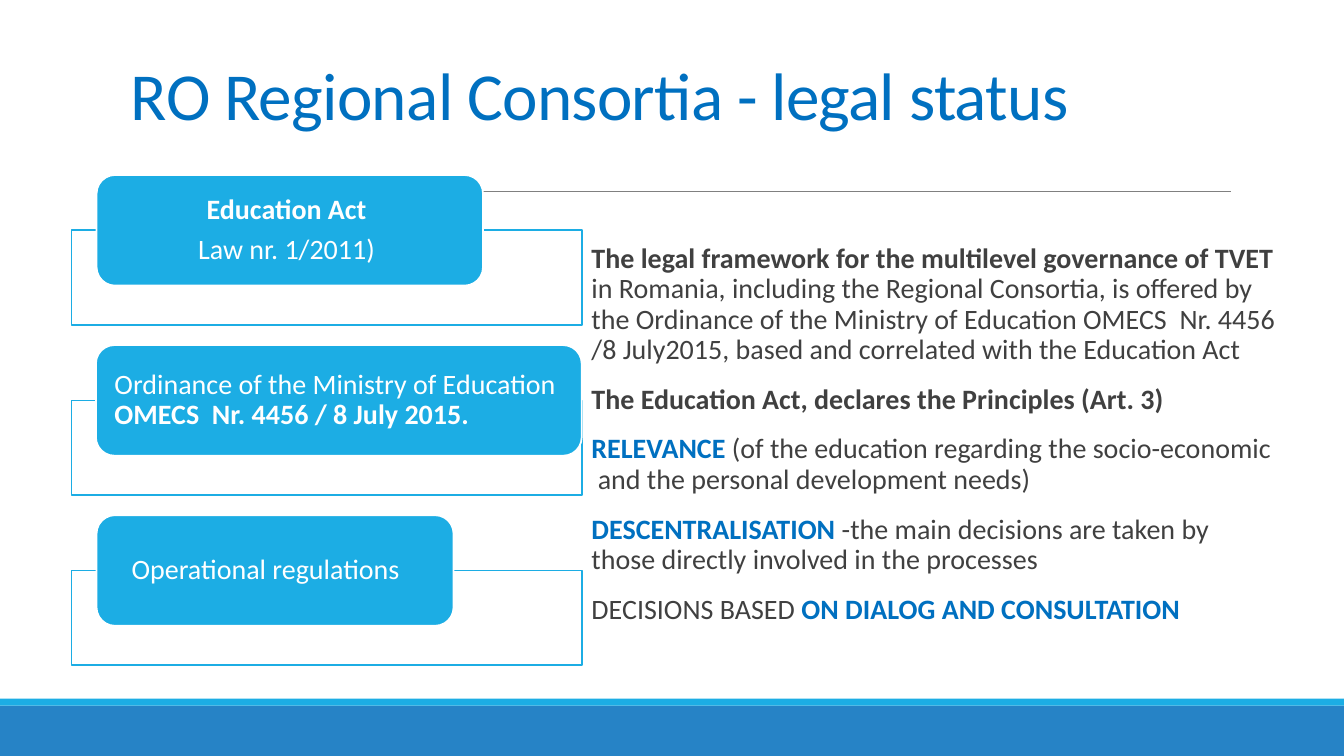
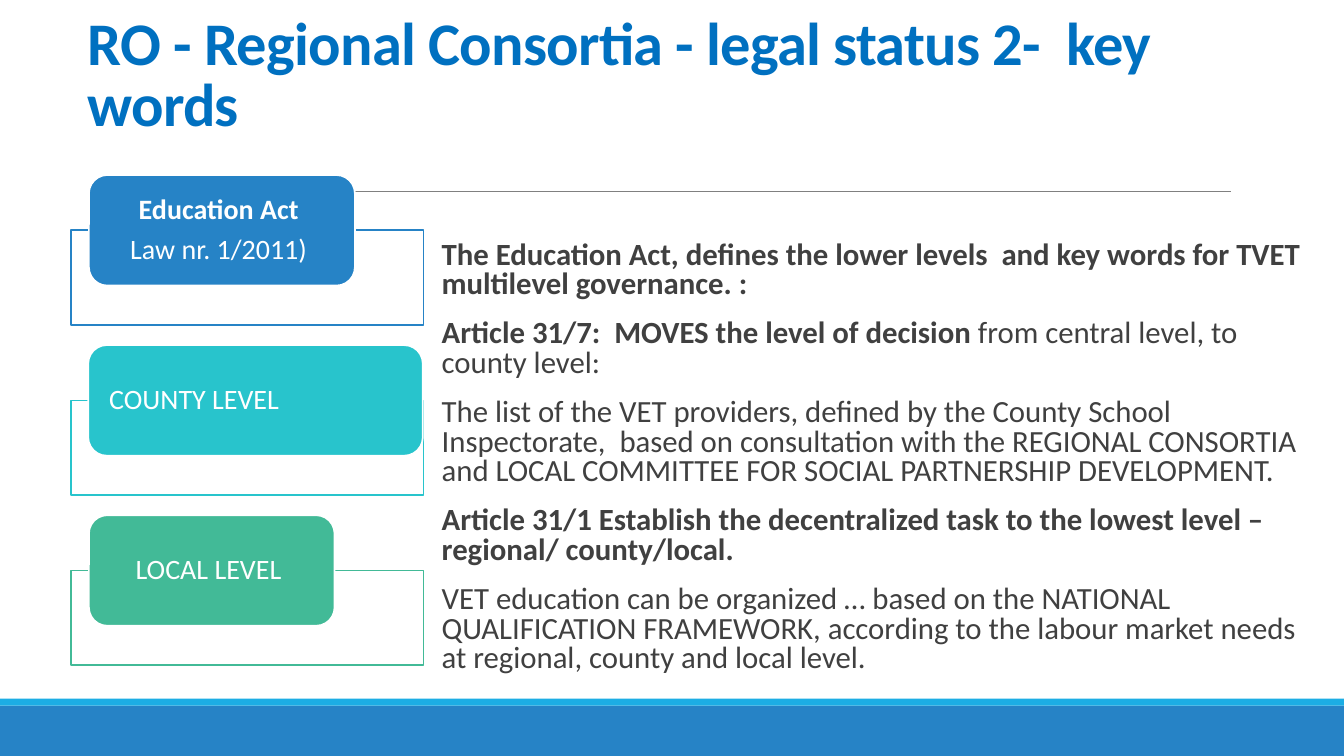
from pptx import Presentation
from pptx import util as u
from pptx.dml.color import RGBColor
from pptx.enum import shapes, text
from lxml import etree

BLUE, SKY, TEAL, GREEN = "2683C6", "1CADE4", "28C4CC", "42BA97"
ACCENT, INK, WHITE, RULE = "0070C0", "404040", "FFFFFF", "808080"
FONT = "Calibri"
LEFT, CENTER = text.PP_ALIGN.LEFT, text.PP_ALIGN.CENTER
TOP, MIDDLE, BOTTOM = text.MSO_ANCHOR.TOP, text.MSO_ANCHOR.MIDDLE, text.MSO_ANCHOR.BOTTOM
RECT, ROUNDED = shapes.MSO_SHAPE.RECTANGLE, shapes.MSO_SHAPE.ROUNDED_RECTANGLE
DRAWING = "{http://schemas.openxmlformats.org/drawingml/2006/main}"
WIDTH, HEIGHT = 960, 540
CARD_TOP, CARD_STEP, CARD_HEIGHT = 125, 121.5, 79
FRAME_LEFT, FRAME_DROP, FRAME_HEIGHT = 51, 39.5, 67.5


def rgb(value):
    return RGBColor.from_string(value)


class Deck:
    """Holds the shared style and the slide being built."""

    def __init__(self):
        self.prs = Presentation()
        self.prs.slide_width, self.prs.slide_height = u.Pt(WIDTH), u.Pt(HEIGHT)
        self.slide = None

    def new_slide(self):
        self.slide = self.prs.slides.add_slide(self.prs.slide_layouts[6])
        self.block(RECT, (0, 504, WIDTH, 36), BLUE)
        self.block(RECT, (0, 499, WIDTH, 5), SKY)
        self.rule(94.5, 879, 137)

    def block(self, kind, box, fill, outline=None):
        block = self.slide.shapes.add_shape(kind, *map(u.Pt, box))
        block.shadow.inherit = False
        block.fill.solid()
        block.fill.fore_color.rgb = rgb(fill)
        if outline:
            block.line.color.rgb = rgb(outline)
            block.line.width = u.Pt(1.25)
        else:
            block.line.fill.background()
        return block

    def rule(self, start, end, y):
        rule = self.slide.shapes.add_connector(
            shapes.MSO_CONNECTOR.STRAIGHT, u.Pt(start), u.Pt(y), u.Pt(end), u.Pt(y))
        rule.line.color.rgb = rgb(RULE)
        rule.line.width = u.Pt(0.5)
        etree.SubElement(rule._element.spPr, DRAWING + "effectLst")

    def set_text(self, holder, paragraphs, size, color, spacing, gap=0,
                 align=LEFT, anchor=TOP, insets=(0, 3.6, 0, 3.6), tracking=None):
        frame = holder.text_frame
        frame.word_wrap = True
        frame.vertical_anchor = anchor
        (frame.margin_left, frame.margin_top,
         frame.margin_right, frame.margin_bottom) = map(u.Pt, insets)
        for index, runs in enumerate(paragraphs):
            para = frame.add_paragraph() if index else frame.paragraphs[0]
            para.alignment = align
            para.line_spacing = spacing
            para.space_before = u.Pt(gap if index else 0)
            for words, bold, *tint in runs:
                if words == "\n":
                    para.add_line_break()
                    continue
                run = para.add_run()
                run.text = words
                run.font.name, run.font.size, run.font.bold = FONT, u.Pt(size), bold
                run.font.color.rgb = rgb(tint[0] if tint else color)
                if tracking:
                    run.font._element.set("spc", str(tracking))

    def text_box(self, box):
        return self.slide.shapes.add_textbox(*map(u.Pt, box))

    def title(self, words, box, size, bold):
        self.set_text(self.text_box(box), [[(words, bold)]], size, ACCENT, 0.85,
                      anchor=BOTTOM, insets=(7.2, 3.6, 7.2, 3.6), tracking=-50)

    def body(self, paragraphs, box, size, spacing):
        self.set_text(self.text_box(box), paragraphs, size, INK, spacing, gap=14)

    def cards(self, cards, frame_width, inset):
        for row, (left, width, color, align, extra, paragraphs) in enumerate(cards):
            top = CARD_TOP + row * CARD_STEP
            self.block(RECT, (FRAME_LEFT, top + FRAME_DROP, frame_width, FRAME_HEIGHT),
                       WHITE, color)
            card = self.block(ROUNDED, (left, top, width, CARD_HEIGHT), color, WHITE)
            self.set_text(card, paragraphs, 20, WHITE, 0.9, gap=7, align=align,
                          anchor=MIDDLE, insets=(inset, 0, inset + extra, 0))


def main():
    education_act = [[("Education Act ", True)], [("Law nr. 1/2011) ", False)]]
    deck = Deck()

    deck.new_slide()
    deck.title("RO Regional Consortia - legal status", (86.5, 22.5, 792, 77), 48, False)
    deck.body([
        [("The legal framework for the multilevel governance of TVET ", True),
         ("in Romania, including the Regional Consortia, is offered by the Ordinance of the "
          "Ministry of Education OMECS  Nr. 4456 /8 July2015, based and correlated with the "
          "Education Act", False)],
        [("The Education Act, declares the Principles (Art. 3)", True)],
        [("RELEVANCE ", True, ACCENT),
         ("(of the education regarding the socio-economic", False), ("\n", False),
         (" and the personal development needs)", False)],
        [("DESCENTRALISATION", True, ACCENT),
         (" -the main decisions are taken by those directly involved in the processes", False)],
        [("DECISIONS BASED ", False), ("ON DIALOG AND CONSULTATION", True, ACCENT)],
    ], (422.5, 171, 490.5, 311), 20, 0.9)
    deck.cards([
        (69, 276, SKY, CENTER, 0, education_act),
        (68.5, 347, SKY, LEFT, 0, [[("Ordinance of the Ministry of Education ", False),
                                    ("OMECS  Nr. 4456 / 8 July 2015.", True)]]),
        (69, 255, SKY, CENTER, 13.5, [[("Operational regulations", False)]]),
    ], 364.5, 9.4)

    deck.new_slide()
    deck.title("RO - Regional Consortia - legal status 2-  key words",
               (55.5, 26, 844.5, 77), 43.2, True)
    deck.body([
        [("The Education Act, defines the lower levels  and key words for TVET multilevel "
          "governance. :", True)],
        [("Article 31/7:  MOVES the level of decision", True),
         (" from central level, to county level:", False)],
        [("The list of the VET providers, defined by the County School Inspectorate,  based on "
          "consultation with the REGIONAL CONSORTIA and LOCAL COMMITTEE FOR SOCIAL PARTNERSHIP "
          "DEVELOPMENT.", False)],
        [("Article 31/1 Establish the decentralized task to the lowest level – regional/ "
          "county/local.", True)],
        [("VET education can be organized … based on the NATIONAL QUALIFICATION FRAMEWORK, "
          "according to the labour market needs at regional, county and local level.", False)],
    ], (315.5, 169, 615.5, 335), 22, 0.8)
    deck.cards([
        (63.5, 190, BLUE, CENTER, 0, education_act),
        (63, 239, TEAL, LEFT, 0, [[(" COUNTY LEVEL", False)]]),
        (63.5, 175.5, GREEN, CENTER, 0, [[("LOCAL LEVEL ", False)]]),
    ], 251.5, 6.6)

    deck.prs.save("out.pptx")


if __name__ == "__main__":
    main()
